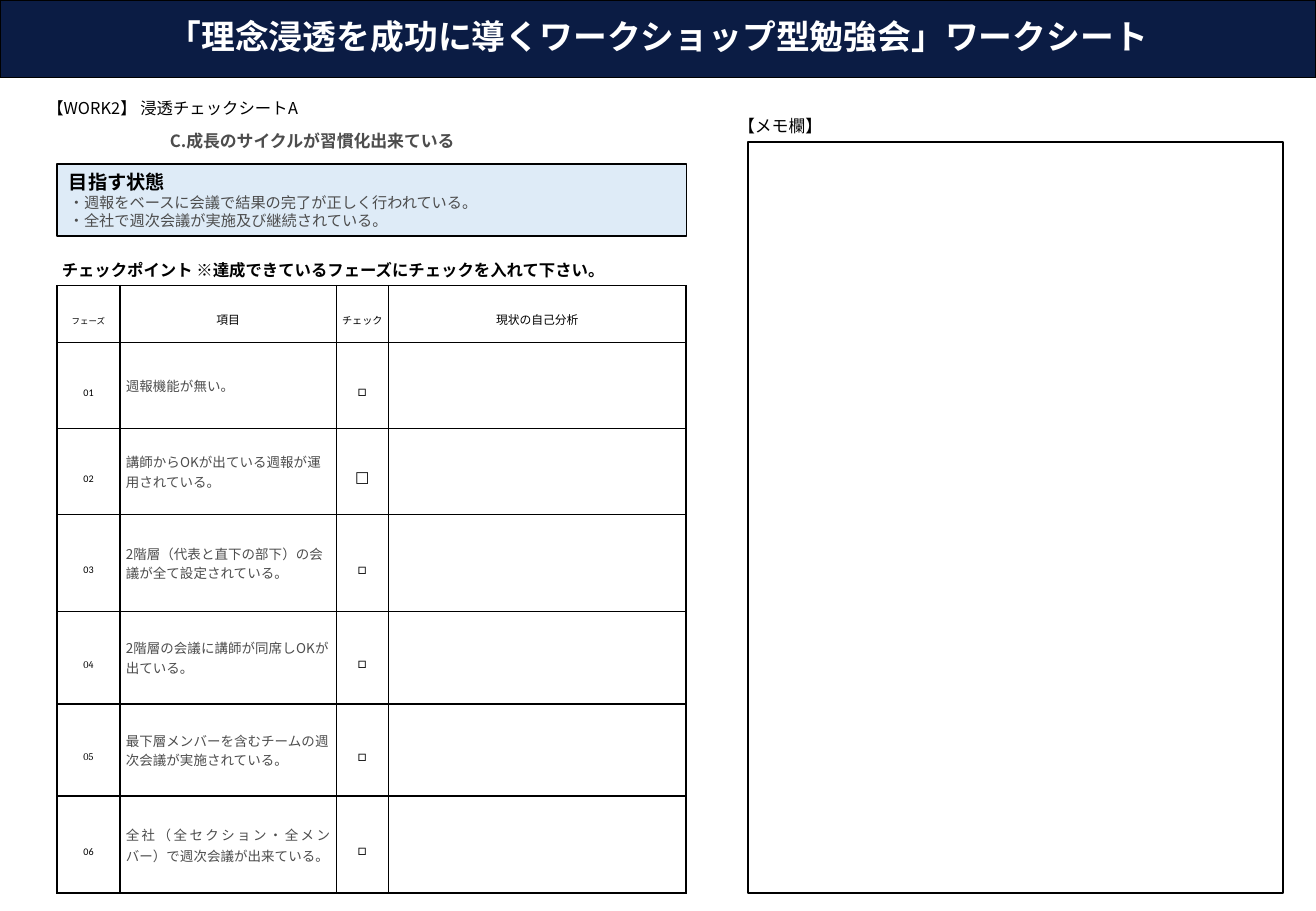
from dataclasses import dataclass

from lxml import etree
from pptx import Presentation
from pptx import util as u
from pptx.dml.color import RGBColor
from pptx.enum import shapes, text
from pptx.oxml import ns


@dataclass(frozen=True)
class Theme:
    navy: str = "0B1C44"
    pale: str = "DEEBF7"
    black: str = "000000"
    grey: str = "4D4D4D"
    white: str = "FFFFFF"
    sans: str = "Noto Sans CJK JP"
    latin: str = "Calibri"
    serif: str = "Cambria"
    title: float = 20
    heading: float = 11.4
    label: float = 9.7
    subtitle: float = 10
    goal: float = 9
    item: float = 8
    column: float = 7
    small: float = 6
    tiny: float = 5
    line: float = 1


T = Theme()
CENTER, LEFT, JUSTIFY = text.PP_ALIGN.CENTER, text.PP_ALIGN.LEFT, text.PP_ALIGN.JUSTIFY

GOALS = ["・週報をベースに会議で結果の完了が正しく行われている。",
         "・全社で週次会議が実施及び継続されている。"]
COLUMNS = [("フェーズ", 1.32, T.tiny, T.serif), ("項目", 4.52, T.column, T.latin),
           ("チェック", 1.09, T.small, T.latin), ("現状の自己分析", 6.22, T.column, T.latin)]
HEADER_HEIGHT = 1.19
# Phase text, row height, number font, check box font
PHASES = [
    ("週報機能が無い。", 1.8, T.latin, T.latin),
    ("講師からOKが出ている週報が運用されている。", 1.8, T.latin, T.serif),
    ("2階層（代表と直下の部下）の会議が全て設定されている。", 2.03, T.latin, T.latin),
    ("2階層の会議に講師が同席しOKが出ている。", 1.93, T.serif, T.latin),
    ("最下層メンバーを含むチームの週次会議が実施されている。", 1.93, T.serif, T.latin),
    ("全社（全セクション・全メンバー）で週次会議が出来ている。", 2.03, T.latin, T.latin),
]


def style(paragraph, size, color=T.black, font=T.sans, bold=False, align=LEFT, spacing=None):
    paragraph.alignment = align
    paragraph.line_spacing = spacing
    for run in paragraph.runs:
        run.font.size = u.Pt(size)
        run.font.bold = bold
        run.font.name = font
        run.font.color.rgb = RGBColor.from_string(color)
        east_asian = etree.SubElement(run.font._element, ns.qn("a:ea"))
        east_asian.set("typeface", T.sans if font == T.serif else font)


def add_box(slide, left, top, width, height, fill=None):
    box = slide.shapes.add_shape(shapes.MSO_SHAPE.RECTANGLE,
                                 u.Cm(left), u.Cm(top), u.Cm(width), u.Cm(height))
    box.shadow.inherit = False
    if fill:
        box.fill.solid()
        box.fill.fore_color.rgb = RGBColor.from_string(fill)
    else:
        box.fill.background()
    box.line.color.rgb = RGBColor.from_string(T.black)
    box.line.width = u.Pt(T.line)
    box.text_frame.vertical_anchor = text.MSO_ANCHOR.MIDDLE
    return box


def add_label(slide, left, top, width, height, words, size=T.label, **look):
    label = slide.shapes.add_textbox(u.Cm(left), u.Cm(top), u.Cm(width), u.Cm(height))
    frame = label.text_frame
    frame.word_wrap = True
    frame.margin_left = frame.margin_right = u.Cm(0.2)
    frame.margin_top = frame.margin_bottom = u.Cm(0.1)
    frame.text = words
    style(frame.paragraphs[0], size, spacing=0.9, **look)


def add_title(slide, width, height):
    banner = add_box(slide, 0, 0, width, height, T.navy)
    banner.text_frame.text = "「理念浸透を成功に導くワークショップ型勉強会」ワークシート"
    style(banner.text_frame.paragraphs[0], T.title, T.white, bold=True, align=CENTER, spacing=0.9)


def add_goal(slide, left, top, width, height):
    goal = add_box(slide, left, top, width, height, T.pale)
    goal.text_frame.text = "\n".join(["目指す状態"] + GOALS)
    heading, *states = goal.text_frame.paragraphs
    style(heading, T.heading, bold=True)
    for state in states:
        style(state, T.goal, T.grey)


def add_borders(cell):
    properties = cell._tc.get_or_add_tcPr()
    for position, side in enumerate(("a:lnL", "a:lnR", "a:lnT", "a:lnB")):
        line = etree.Element(ns.qn(side), w=str(u.Pt(T.line)))
        fill = etree.SubElement(line, ns.qn("a:solidFill"))
        etree.SubElement(fill, ns.qn("a:srgbClr"), val=T.black)
        properties.insert(position, line)


def fill_cell(cell, words, size, **look):
    cell.fill.background()
    cell.vertical_anchor = text.MSO_ANCHOR.MIDDLE
    cell.margin_left = cell.margin_right = u.Cm(0.12)
    cell.margin_top = cell.margin_bottom = 0
    cell.text = words
    style(cell.text_frame.paragraphs[0], size, **look)
    add_borders(cell)


def add_checklist(slide, left, top):
    widths = [width for _, width, _, _ in COLUMNS]
    heights = [HEADER_HEIGHT] + [height for _, height, _, _ in PHASES]
    frame = slide.shapes.add_table(len(heights), len(widths), u.Cm(left), u.Cm(top),
                                   u.Cm(sum(widths)), u.Cm(sum(heights)))
    checklist = frame.table
    checklist.first_row = checklist.horz_banding = False
    for column, width in zip(checklist.columns, widths):
        column.width = u.Cm(width)
    for row, height in zip(checklist.rows, heights):
        row.height = u.Cm(height)

    # Header row
    for index, (heading, _, size, font) in enumerate(COLUMNS):
        fill_cell(checklist.cell(0, index), heading, size, font=font,
                  align=CENTER, spacing=u.Pt(16))
    # One row for each phase
    for number, (item, _, number_font, check_font) in enumerate(PHASES, 1):
        phase, description, check, analysis = checklist.rows[number].cells
        last = number == len(PHASES)
        fill_cell(phase, f"{number:02}", T.small, font=number_font,
                  align=CENTER, spacing=u.Pt(16))
        fill_cell(description, item, T.item, color=T.grey,
                  align=JUSTIFY if last else LEFT, spacing=u.Pt(12) if last else None)
        fill_cell(check, "□", T.goal, font=check_font, align=CENTER, spacing=u.Pt(18))
        fill_cell(analysis, "", T.item)


def add_worksheet(slide, left, top):
    add_label(slide, left - 0.4, top, 13.46, 0.66, "【WORK2】 浸透チェックシートA")
    add_label(slide, left + 2.16, top + 0.68, 8.31, 0.91, "C.成長のサイクルが習慣化出来ている",
              T.subtitle, color=T.grey, bold=True)
    add_goal(slide, left, top + 1.42, 13.16, 1.5)
    add_label(slide, left - 0.4, top + 3.37, 12.37, 0.81,
              "チェックポイント ※達成できているフェーズにチェックを入れて下さい。",
              bold=True, align=CENTER)
    add_checklist(slide, left, top + 3.96)


def add_memo(slide, left, top, width, height):
    add_box(slide, left, top, width, height)
    add_label(slide, left - 0.41, top - 0.6, 4.7, 0.8, "【メモ欄】", T.subtitle)


def main():
    deck = Presentation()
    deck.slide_width, deck.slide_height = u.Cm(27.51), u.Cm(19.05)
    slide = deck.slides.add_slide(deck.slide_layouts[6])
    add_title(slide, 27.51, 1.62)
    add_worksheet(slide, 1.19, 2.01)
    add_memo(slide, 15.64, 2.97, 11.18, 15.7)
    deck.save("out.pptx")


if __name__ == "__main__":
    main()
